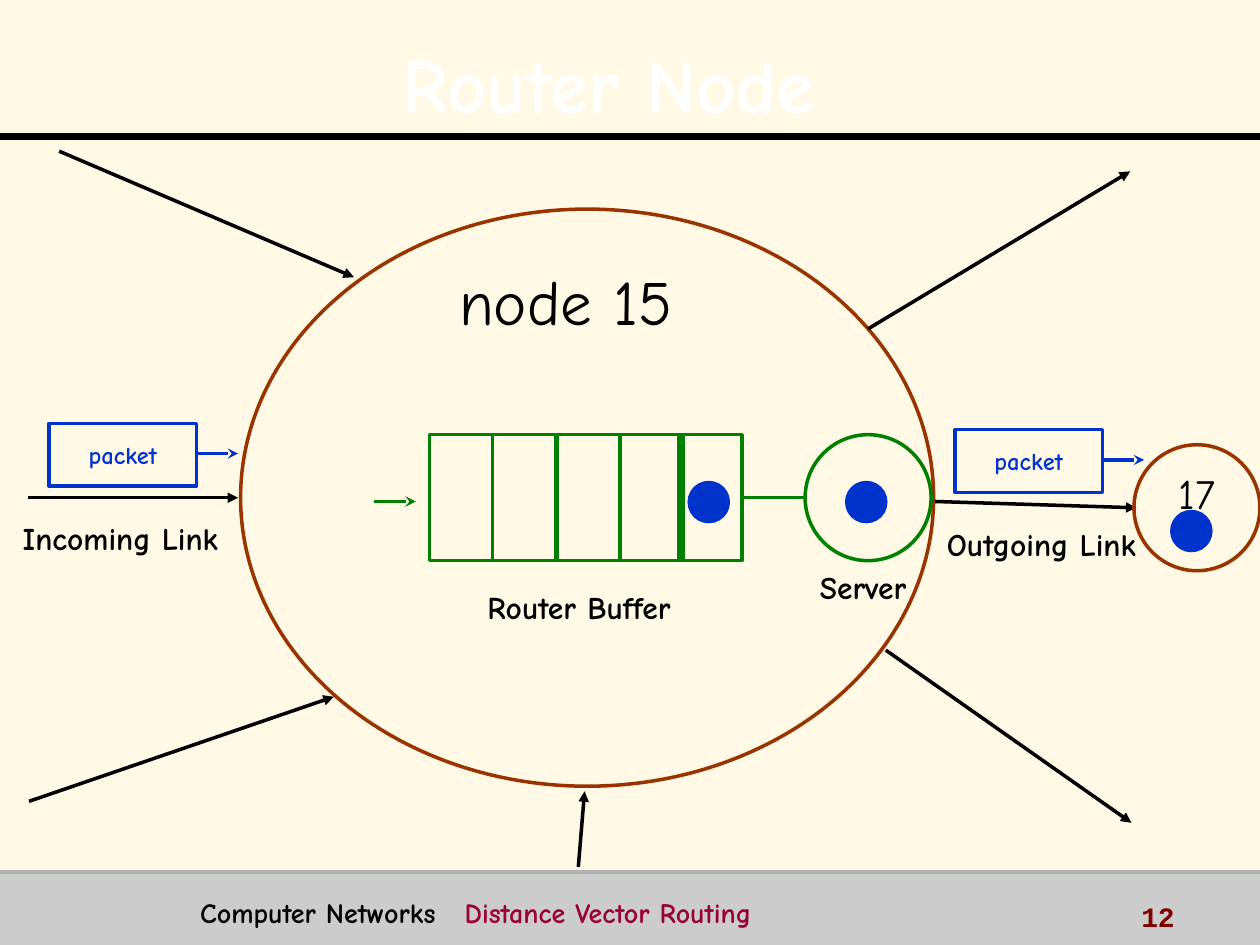
import pptx
import pptx.util
import pptx.dml.color
import pptx.enum.shapes
import pptx.enum.text
import pptx.oxml
import pptx.oxml.ns

Inches = pptx.util.Inches
RGBColor = pptx.dml.color.RGBColor
Shape = pptx.enum.shapes.MSO_SHAPE
Align = pptx.enum.text.PP_ALIGN
Anchor = pptx.enum.text.MSO_ANCHOR

CREAM = RGBColor(0xFF, 0xF9, 0xE6)
WHITE = RGBColor(0xFF, 0xFF, 0xFF)
BLACK = RGBColor(0, 0, 0)
BAR_GRAY = RGBColor(0xCC, 0xCC, 0xCC)
RULE_GRAY = RGBColor(0xB2, 0xB2, 0xB2)
BROWN = RGBColor(0x99, 0x33, 0)
GREEN = RGBColor(0, 0x80, 0)
BLUE = RGBColor(0, 0x33, 0xCC)
CRIMSON = RGBColor(0x99, 0, 0x33)
MAROON = RGBColor(0x80, 0, 0)


def xml_element(markup):
    """Parse markup, declaring the drawing namespace at its first space."""
    return pptx.oxml.parse_xml(
        markup.replace(" ", f" {pptx.oxml.ns.nsdecls('a')} ", 1))


class Diagram:
    font_name = "Comic Neue"
    line_width = 2

    def __init__(self, slide):
        self.slide = slide

    def format_font(self, font, color, **values):
        for name, value in {"name": self.font_name, "bold": True, **values}.items():
            setattr(font, name, value)
        font.color.rgb = color

    def shape(self, kind, left, top, width, height, line=None, fill=None):
        shape = self.slide.shapes.add_shape(
            kind, Inches(left), Inches(top), Inches(width), Inches(height))
        shape.shadow.inherit = False
        if fill is None:
            shape.fill.background()
        else:
            shape.fill.solid()
            shape.fill.fore_color.rgb = fill
        if line is None:
            shape.line.fill.background()
        else:
            shape.line.color.rgb = line
            shape.line.width = pptx.util.Pt(self.line_width)
        return shape

    def line(self, start, end, color=BLACK, width=line_width, head=None):
        """Draw a line; head names the arrowhead put at its end."""
        connector = self.slide.shapes.add_connector(
            pptx.enum.shapes.MSO_CONNECTOR.STRAIGHT,
            *(Inches(value) for value in (*start, *end)))
        connector.line.color.rgb = color
        connector.line.width = pptx.util.Pt(width)
        if head:
            connector.line._get_or_add_ln().append(
                xml_element(f'<a:tailEnd type="{head}"/>'))
        connector._element.spPr.append(xml_element("<a:effectLst />"))

    def label(self, shape, text, size, color=BLACK, align=Align.CENTER,
              anchor=Anchor.MIDDLE, wrap=False, **font_values):
        frame = shape.text_frame
        for name, value in {"word_wrap": wrap, "vertical_anchor": anchor}.items():
            setattr(frame, name, value)
        paragraph = frame.paragraphs[0]
        paragraph.alignment = align
        run = paragraph.add_run()
        run.text = text
        self.format_font(run.font, color, size=pptx.util.Pt(size), **font_values)
        return paragraph

    def text(self, left, top, width, height, text, size, color=BLACK, **options):
        box = self.slide.shapes.add_textbox(
            Inches(left), Inches(top), Inches(width), Inches(height))
        return self.label(box, text, size, color, **options)

    def packet(self, left, top):
        """Draw a labelled packet with its motion arrow."""
        width, arrow_y = 1.17, top + 0.24
        box = self.shape(Shape.RECTANGLE, left, top, width, 0.5, BLUE)
        self.label(box, "packet", 14, BLUE)
        self.line((left + width, arrow_y), (left + width + 0.33, arrow_y),
                  BLUE, head="stealth")

    def title(self, text):
        paragraph = self.text(0.58, 0.08, 8.5, 1.08, text, 44, WHITE, wrap=True)
        paragraph.line_spacing = 1.1
        properties = paragraph.runs[0].font._element
        shadow = xml_element(
            '<a:effectLst ><a:outerShdw dist="35921" dir="2700000">'
            '<a:srgbClr val="000000"/></a:outerShdw></a:effectLst>')
        properties.find(pptx.oxml.ns.qn("a:solidFill")).addnext(shadow)

    def footer(self):
        paragraph = self.text(
            1.49, 7.06, 7.2, 0.31, "Computer Networks\t", 16,
            align=Align.LEFT, anchor=Anchor.TOP, wrap=True)
        paragraph._p.get_or_add_pPr().append(xml_element(
            f'<a:tabLst ><a:tab pos="{Inches(2.1)}" algn="l"/></a:tabLst>'))
        topic = paragraph.add_run()
        topic.text = "Distance Vector Routing"
        self.format_font(topic.font, CRIMSON, size=pptx.util.Pt(16))
        self.text(8.96, 7.09, 1, 0.25, "12", 16, MAROON, align=Align.LEFT,
                  anchor=Anchor.TOP, wrap=True, name="Courier New")


def main():
    presentation = pptx.Presentation()
    presentation.slide_width = Inches(10)
    presentation.slide_height = Inches(7.5)
    slide = presentation.slides.add_slide(presentation.slide_layouts[6])
    slide.background.fill.solid()
    slide.background.fill.fore_color.rgb = CREAM
    diagram = Diagram(slide)

    diagram.shape(Shape.RECTANGLE, 0, 6.92, 10, 0.58, fill=BAR_GRAY)
    diagram.line((0, 1.08), (10, 1.08), width=4)
    diagram.line((0, 6.92), (10, 6.92), RULE_GRAY)
    diagram.title("Router Node")

    diagram.shape(Shape.OVAL, 1.91, 1.66, 5.5, 4.58, BROWN)
    diagram.text(3.48, 1.87, 2.02, 1.02, "node 15", 36, bold=False)
    links = [
        ((7.42, 3.98), (9.02, 4.03)),
        ((6.89, 2.61), (8.97, 1.36)),
        ((7.03, 5.16), (8.98, 6.53)),
        ((0.22, 3.95), (1.89, 3.95)),
        ((0.47, 1.2), (2.81, 2.2)),
        ((0.23, 6.36), (2.65, 5.53)),
        ((4.59, 6.88), (4.64, 6.28)),
    ]
    for start, end in links:
        diagram.line(start, end, head="triangle")

    buffer_top = 3.45
    for cell_left in (3.41, 3.91, 4.42, 4.92, 5.39):
        diagram.shape(Shape.RECTANGLE, cell_left, buffer_top, 0.5, 1, GREEN)
    diagram.shape(Shape.OVAL, 6.39, buffer_top, 1, 1, GREEN)
    diagram.line((5.89, 3.95), (6.39, 3.95), GREEN)
    diagram.line((2.97, 3.98), (3.3, 3.98), GREEN, head="stealth")

    next_node = diagram.shape(Shape.OVAL, 9, 3.53, 1, 1, BROWN)
    next_node.text_frame.margin_bottom = Inches(0.29)
    diagram.label(next_node, "17", 24, bold=False)

    for left, top in ((0.39, 3.36), (7.58, 3.41)):
        diagram.packet(left, top)
    for left, top in ((5.47, 3.83), (6.72, 3.83), (9.3, 4.06)):
        diagram.shape(Shape.OVAL, left, top, 0.31, 0.31, BLUE, BLUE)

    captions = [
        ("Incoming Link", 0.08, 4.06, 1.75),
        ("Router Buffer", 3.72, 4.61, 1.75),
        ("Server", 6.31, 4.45, 1.08),
        ("Outgoing Link", 7.39, 4.11, 1.75),
    ]
    for caption, left, top, width in captions:
        diagram.text(left, top, width, 0.42, caption, 18)

    diagram.footer()
    presentation.save("out.pptx")


if __name__ == "__main__":
    main()
